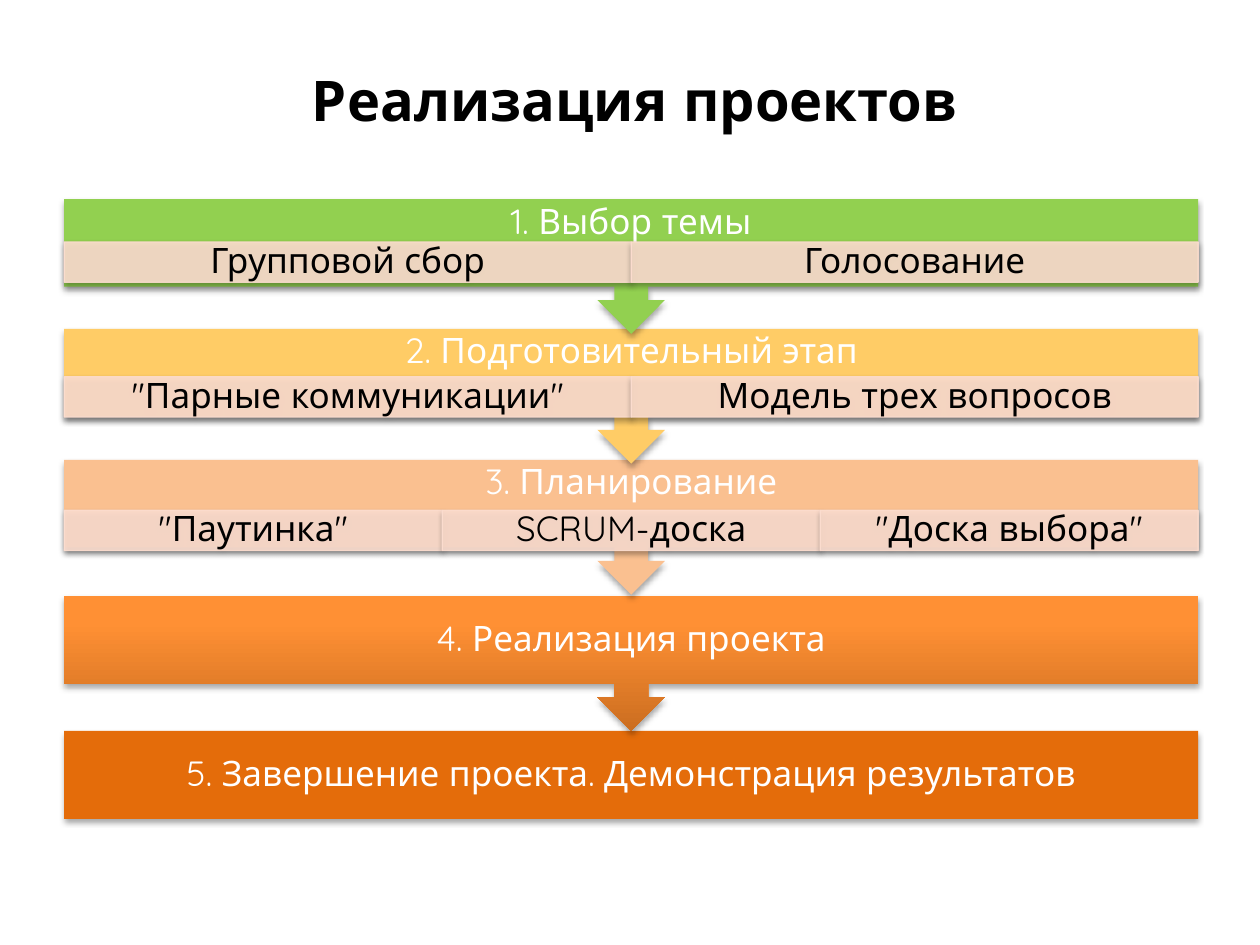
from dataclasses import dataclass

from lxml import etree
from pptx import Presentation
from pptx.dml.color import RGBColor
from pptx.enum.shapes import MSO_SHAPE
from pptx.enum.text import MSO_ANCHOR, PP_ALIGN
from pptx.oxml.ns import qn
from pptx.util import Inches, Pt

RECTANGLE = MSO_SHAPE.RECTANGLE
ARROW_CALLOUT = MSO_SHAPE.DOWN_ARROW_CALLOUT
MIDDLE = MSO_ANCHOR.MIDDLE
CENTER = PP_ALIGN.CENTER


@dataclass(frozen=True)
class Theme:
    font: str = "Quicksand"
    title_size: int = 32
    text_size: int = 20
    dark: str = "000000"
    light: str = "FFFFFF"
    method: str = "FCDDCF"
    topic: str = "92D050"
    preparation: str = "FFCC66"
    planning: str = "FAC090"
    realization: tuple = ("FF9034", "CC6E20")
    completion: str = "E46C0A"


@dataclass(frozen=True)
class Stage:
    heading: str
    top: float
    fill: object
    methods: tuple = ()
    methods_offset: float = 0


THEME = Theme()
LEFT, WIDTH = 0.51, 9
BAR_HEIGHT, CALLOUT_HEIGHT = 0.7, 1.07
HEADING_HEIGHT, METHOD_HEIGHT = 0.38, 0.32

STAGES = (
    Stage("1. Выбор темы", 1.58, THEME.topic,
          ("Групповой сбор", "Голосование"), 0.34),
    Stage("2. Подготовительный этап", 2.61, THEME.preparation,
          ('"Парные коммуникации"', "Модель трех вопросов"), 0.38),
    Stage("3. Планирование", 3.65, THEME.planning,
          ('"Паутинка"', "SCRUM-доска", '"Доска выбора"'), 0.4),
    Stage("4. Реализация проекта", 4.73, THEME.realization),
    Stage("5. Завершение проекта. Демонстрация результатов", 5.8,
          THEME.completion),
)


def rgb(value):
    return RGBColor.from_string(value)


def write(shape, text, size, color, bold=False):
    frame = shape.text_frame
    frame.text = text
    frame.word_wrap = True
    frame.vertical_anchor = MIDDLE
    paragraph = frame.paragraphs[0]
    paragraph.alignment = CENTER
    font = paragraph.font
    font.name, font.size, font.bold = THEME.font, Pt(size), bold
    font.color.rgb = rgb(color)
    return frame


def add_soft_shadow(shape):
    shape.shadow.inherit = False
    effects = shape._element.spPr.find(qn("a:effectLst"))
    shadow = etree.SubElement(effects, qn("a:outerShdw"), blurRad="40000",
                              dist="23000", dir="5400000", rotWithShape="0")
    color = etree.SubElement(shadow, qn("a:srgbClr"), val="000000")
    etree.SubElement(color, qn("a:alpha"), val="35000")


def paint(shape, fill):
    """Fill with one colour, or from top to bottom with a pair of colours."""
    if isinstance(fill, str):
        shape.fill.solid()
        shape.fill.fore_color.rgb = rgb(fill)
        return
    shape.fill.gradient()
    shape.fill.gradient_angle = 270
    for stop, position, color in zip(shape.fill.gradient_stops, (0.2, 1), fill):
        stop.position = position
        stop.color.rgb = rgb(color)


def add_block(slide, kind, left, top, width, height, fill):
    block = slide.shapes.add_shape(kind, Inches(left), Inches(top),
                                   Inches(width), Inches(height))
    paint(block, fill)
    block.line.fill.background()
    add_soft_shadow(block)
    return block


def add_method(slide, text, left, top, width):
    method = add_block(slide, RECTANGLE, left, top, width, METHOD_HEIGHT,
                       THEME.method)
    method.line.color.rgb = rgb(THEME.method)
    method.line.width = Pt(0.75)
    for color in method._element.spPr.iter(qn("a:srgbClr")):
        if color.get("val") == THEME.method:
            etree.SubElement(color, qn("a:alpha"), val="90000")
    frame = write(method, text, THEME.text_size, THEME.dark)
    frame.margin_left = frame.margin_right = Inches(0.16)
    frame.margin_top = frame.margin_bottom = Inches(0.03)
    frame.paragraphs[0].line_spacing = 0.9


def add_stage(slide, stage, is_last):
    kind, height = ((RECTANGLE, BAR_HEIGHT) if is_last
                    else (ARROW_CALLOUT, CALLOUT_HEIGHT))
    bar = add_block(slide, kind, LEFT, stage.top, WIDTH, height, stage.fill)
    frame = write(bar, stage.heading, THEME.text_size, THEME.light)
    frame.margin_left = frame.margin_right = Inches(0.16)
    frame.margin_top = 0
    frame.margin_bottom = Inches(BAR_HEIGHT - HEADING_HEIGHT if stage.methods else 0)
    frame.paragraphs[0].line_spacing = 0.9
    for column, text in enumerate(stage.methods):
        width = WIDTH / len(stage.methods)
        add_method(slide, text, LEFT + column * width,
                   stage.top + stage.methods_offset, width)


def add_title(slide, text):
    title = slide.shapes.title
    title.left, title.top = Inches(0.67), Inches(0.47)
    title.width, title.height = Inches(8.74), Inches(0.64)
    write(title, text, THEME.title_size, THEME.dark, bold=True)


def main():
    presentation = Presentation()
    presentation.slide_width = Inches(10)
    presentation.slide_height = Inches(7.5)
    slide = presentation.slides.add_slide(presentation.slide_layouts[5])
    add_title(slide, "Реализация проектов")
    # Later stages lie behind, so that each arrow overlaps the next bar.
    for stage in reversed(STAGES):
        add_stage(slide, stage, is_last=stage is STAGES[-1])
    presentation.save("out.pptx")


if __name__ == "__main__":
    main()
